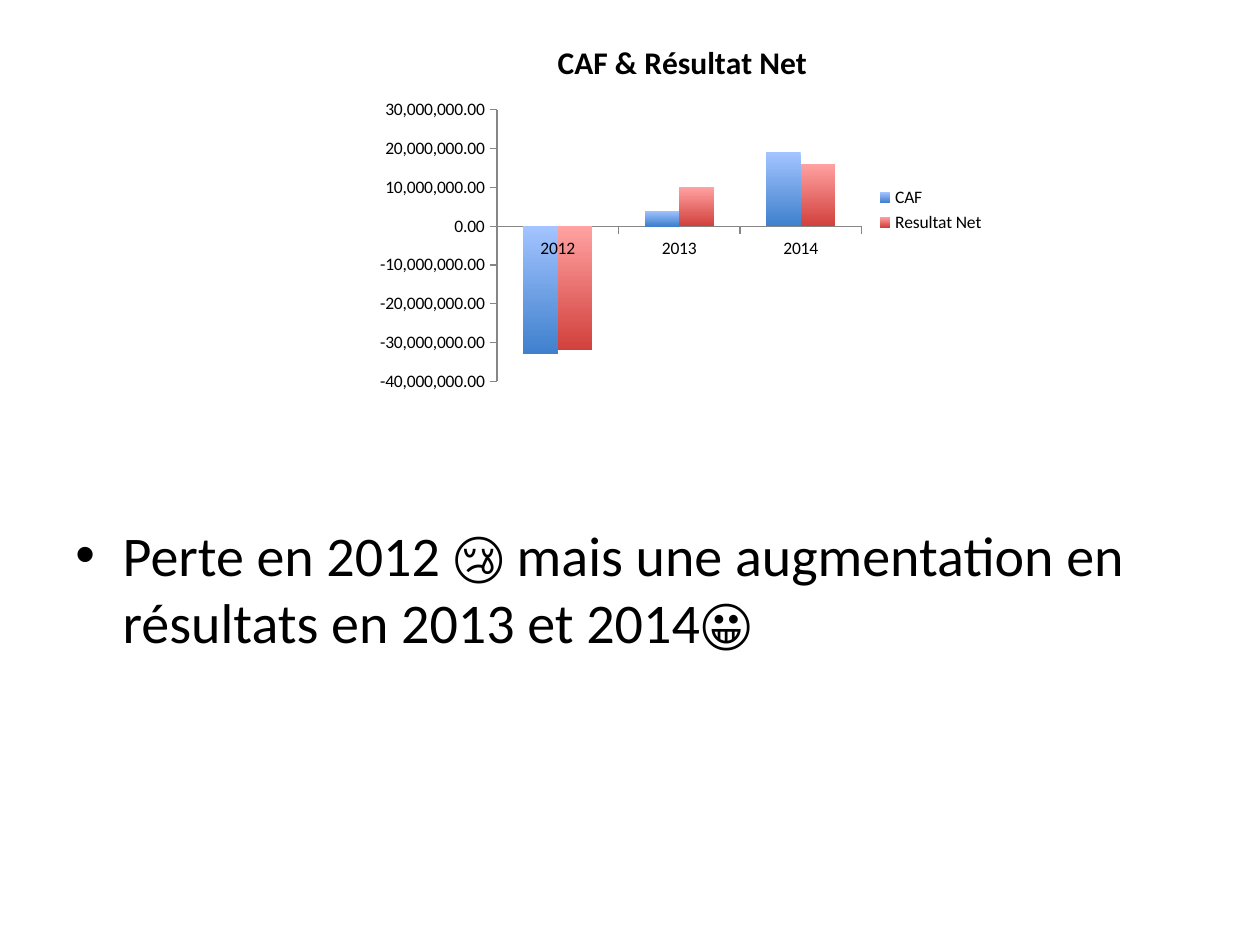
from pptx import Presentation
from pptx.chart.data import CategoryChartData
from pptx.dml.color import RGBColor
from pptx.enum import chart as ch
from pptx.oxml import parse_xml
from pptx.oxml.ns import nsdecls
from pptx.util import Pt

FONT = "Calibri"
BLACK = RGBColor(0, 0, 0)
GREY = RGBColor(0x86, 0x86, 0x86)
BLUES = RGBColor(0xA3, 0xC4, 0xFF), RGBColor(0x3F, 0x80, 0xCD)
REDS = RGBColor(0xFF, 0xA2, 0xA1), RGBColor(0xD1, 0x40, 0x3C)

YEARS = ["2012", "2013", "2014"]
SERIES = [
    ("CAF", [-33000000, 4000000, 19000000], BLUES),
    ("Resultat Net", [-32000000, 10000000, 16000000], REDS),
]


def set_font(font, size, bold=False):
    font.name = FONT
    font.size = Pt(size)
    font.bold = bold
    font.color.rgb = BLACK


def shade(bars, tones):
    """Fill a series from light at the top to dark at the bottom."""
    bars.invert_if_negative = False
    fill = bars.format.fill
    fill.gradient()
    fill.gradient_angle = 270
    for stop, tone in zip(fill.gradient_stops, tones):
        stop.color.rgb = tone


def style_axis(axis):
    axis.has_major_gridlines = False
    axis.major_tick_mark = ch.XL_TICK_MARK.OUTSIDE
    axis.minor_tick_mark = ch.XL_TICK_MARK.NONE
    axis.tick_label_position = ch.XL_TICK_LABEL_POSITION.NEXT_TO_AXIS
    axis.format.line.color.rgb = GREY
    axis.format.line.width = Pt(0.75)


def add_chart(slide):
    data = CategoryChartData(number_format="#,##0.00")
    data.categories = YEARS
    for name, vals, _ in SERIES:
        data.add_series(name, vals)
    chart = slide.shapes.add_chart(
        ch.XL_CHART_TYPE.COLUMN_CLUSTERED,
        Pt(210), Pt(12), Pt(360), Pt(216), data).chart
    set_font(chart.font, 10)

    # Title and legend
    chart.has_title = True
    title = chart.chart_title.text_frame
    title.text = "CAF & Résultat Net"
    set_font(title.paragraphs[0].runs[0].font, 18, True)
    chart.has_legend = True
    chart.legend.position = ch.XL_LEGEND_POSITION.RIGHT
    chart.legend.include_in_layout = False

    # Axes
    style_axis(chart.category_axis)
    vals = chart.value_axis
    style_axis(vals)
    vals.minimum_scale, vals.maximum_scale = -40000000, 30000000
    vals.major_unit = 10000000
    vals.tick_labels.number_format = "#,##0.00"
    vals.tick_labels.number_format_is_linked = False

    # Columns
    plot = chart.plots[0]
    plot.gap_width, plot.overlap = 150, 0
    plot.vary_by_categories = False
    for bars, (_, _, tones) in zip(plot.series, SERIES):
        shade(bars, tones)


def add_bullet(slide, words):
    box = slide.shapes.add_textbox(Pt(36), Pt(294), Pt(630), Pt(189))
    frame = box.text_frame
    frame.word_wrap = True
    frame.text = words
    para = frame.paragraphs[0]
    para.space_before = Pt(6.4)
    set_font(para.runs[0].font, 32)
    props = para._p.get_or_add_pPr()
    props.set("marL", str(Pt(27)))
    props.set("indent", str(-Pt(27)))
    for tag in ('buFont {} typeface="Arial"', 'buChar {} char="•"'):
        props.append(parse_xml("<a:" + tag.format(nsdecls("a")) + "/>"))


def main():
    deck = Presentation()
    deck.slide_width, deck.slide_height = Pt(720), Pt(540)
    slide = deck.slides.add_slide(deck.slide_layouts[6])
    add_chart(slide)
    add_bullet(slide, "Perte en 2012 😢 mais une augmentation en "
                      "résultats en 2013 et 2014😀")
    deck.save("out.pptx")


if __name__ == "__main__":
    main()
